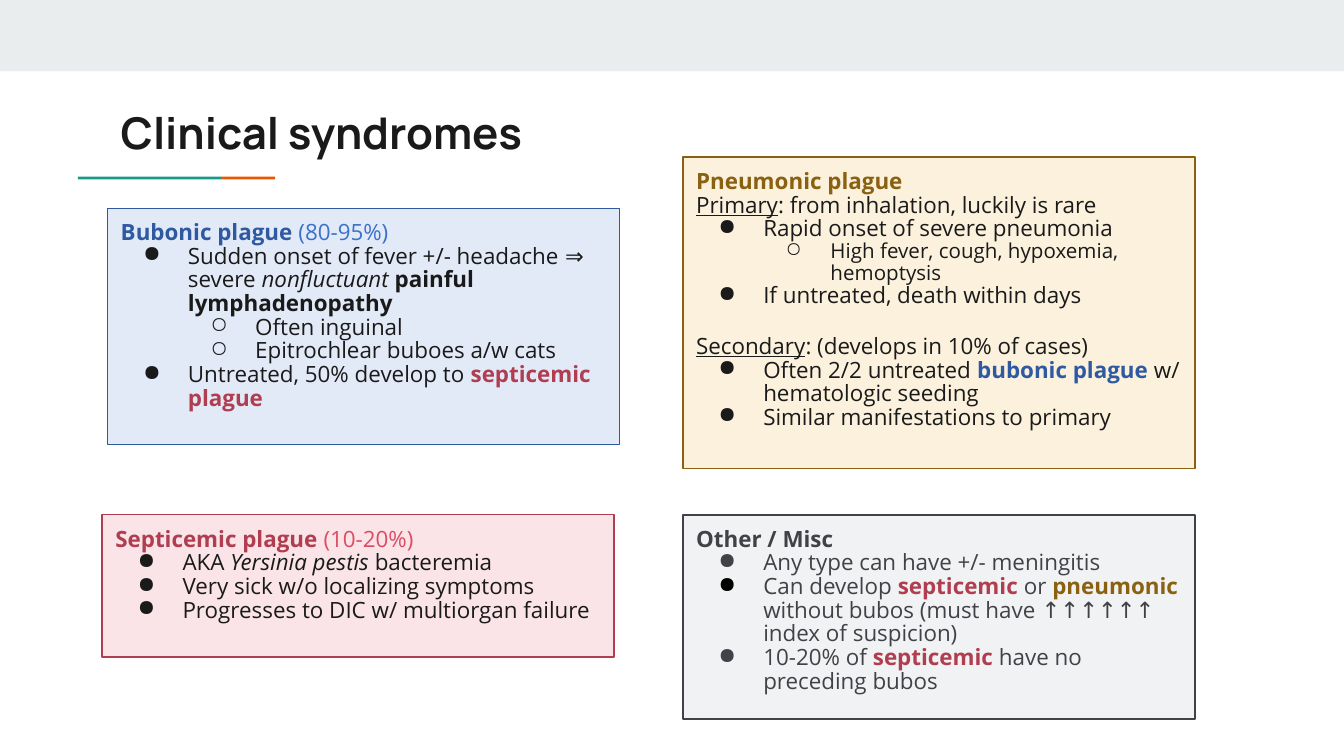
import pptx
import pptx.util
import pptx.dml.color
import pptx.enum.shapes
import pptx.enum.text
import pptx.oxml.ns
import lxml.etree

Pt = pptx.util.Pt
RECT = pptx.enum.shapes.MSO_SHAPE.RECTANGLE

COLORS = {
    "band": "E9EDEE", "teal": "1A9988", "orange": "EB5600",
    "text": "1A1A1A", "black": "000000",
    "blue": "2F5AA2", "blue_light": "3B71CA", "blue_fill": "E2EAF7",
    "red": "B03D50", "red_light": "DC4C64", "red_fill": "FAE4E8",
    "brown": "896110", "brown_fill": "FBF1DD",
    "gray": "404247", "gray_fill": "F1F2F3",
}
BULLETS = {1: "●", 2: "○"}
LINE_SPACING = 0.88
BOX_W = 274.3
LEFT_X, RIGHT_X = 57.6, 365.8
LOWER_Y = 275.8


def rgb(name):
    return pptx.dml.color.RGBColor.from_string(COLORS[name])


def add_rect(s, box, fill, line=None):
    sp = s.shapes.add_shape(RECT, *map(Pt, box))
    sp.shadow.inherit = False
    sp.fill.solid()
    sp.fill.fore_color.rgb = rgb(fill)
    if line:
        sp.line.color.rgb = rgb(line)
        sp.line.width = Pt(0.75)
    else:
        sp.line.fill.background()
    return sp


def set_frame(sp):
    tf = sp.text_frame
    tf.word_wrap = True
    tf.vertical_anchor = pptx.enum.text.MSO_ANCHOR.TOP
    tf.margin_left = tf.margin_right = tf.margin_top = tf.margin_bottom = Pt(7.2)
    return tf


def add_run(p, text, color, style="", size=12, font="Open Sans"):
    """Style letters: b bold, i italic, u underline."""
    r = p.add_run()
    r.text = text
    r.font.name = font
    r.font.size = Pt(size)
    r.font.color.rgb = rgb(color)
    r.font.bold = "b" in style
    r.font.italic = "i" in style
    r.font.underline = "u" in style


def add_bullet(p, level, color):
    ppr = p._p.get_or_add_pPr()
    p.level = level - 1
    ppr.set("marL", str(Pt(36 * level)))
    ppr.set("indent", str(-Pt(24)))
    qn = pptx.oxml.ns.qn
    clr = lxml.etree.SubElement(ppr, qn("a:buClr"))
    lxml.etree.SubElement(clr, qn("a:srgbClr")).set("val", COLORS[color])
    lxml.etree.SubElement(ppr, qn("a:buChar")).set("char", BULLETS[level])


def add_header(s, box):
    """Top band, title and two-colour rule in the given box."""
    x, y, w, h = box
    add_rect(s, (x, y, w, 38.2), "band")
    rule_y = y + 94.6
    add_rect(s, (x + 41.8, rule_y, 76.6, 1.6), "teal")
    add_rect(s, (x + 118.4, rule_y, 29, 1.6), "orange")
    title = s.shapes.add_textbox(Pt(x + 57.6), Pt(y + 49.7), Pt(605.5), Pt(h - 49.7))
    p = set_frame(title).paragraphs[0]
    add_run(p, "Clinical syndromes", "text", "b", 23.4, "Manrope")


def add_syndrome(s, box, fill, line, paragraphs, body="text"):
    """Each paragraph is (level, runs, options); level 0 has no bullet."""
    tf = set_frame(add_rect(s, box, fill, line))
    for i, (level, runs, *rest) in enumerate(paragraphs):
        options = rest[0] if rest else {}
        p = tf.paragraphs[0] if i == 0 else tf.add_paragraph()
        p.alignment = pptx.enum.text.PP_ALIGN.LEFT
        if level:
            add_bullet(p, level, options.get("bullet", body))
        p.line_spacing = LINE_SPACING
        p.space_before = Pt(options.get("before", 0))
        for text, *look in runs:
            color = look[0] if look and look[0] else body
            style = look[1] if len(look) > 1 else ""
            add_run(p, text, color, style, options.get("size", 12))


BUBONIC = [
    (0, [("Bubonic plague", "blue", "b"), (" (80-95%)", "blue_light")]),
    (1, [("Sudden onset of fever +/- headache ⇒ severe ",),
         ("nonfluctuant ", None, "i"), ("painful lymphadenopathy", None, "b")]),
    (2, [("Often inguinal",)]),
    (2, [("Epitrochlear buboes a/w cats",)]),
    (1, [("Untreated, 50% develop to ",), ("septicemic plague", "red", "b")]),
]
SEPTICEMIC = [
    (0, [("Septicemic plague ", "red", "b"), ("(10-20%)", "red_light")]),
    (1, [("AKA ",), ("Yersinia pestis", None, "i"), (" bacteremia",)]),
    (1, [("Very sick w/o localizing symptoms",)]),
    (1, [("Progresses to DIC w/ multiorgan failure",)]),
]
PNEUMONIC = [
    (0, [("Pneumonic plague", "brown", "b")]),
    (0, [("Primary", None, "u"), (": from inhalation, luckily is rare",)]),
    (1, [("Rapid onset of severe pneumonia",)]),
    (2, [("High fever, cough, hypoxemia, hemoptysis",)], {"size": 11}),
    (1, [("If untreated, death within days",)]),
    (0, [("Secondary", None, "u"), (": (develops in 10% of cases)",)], {"before": 14.4}),
    (1, [("Often 2/2 untreated ",), ("bubonic plague", "blue", "b"),
         (" w/ hematologic seeding",)]),
    (1, [("Similar manifestations to primary",)]),
]
OTHER = [
    (0, [("Other / Misc", None, "b")]),
    (1, [("Any type can have +/- meningitis",)]),
    (1, [("Can develop ",), ("septicemic ", "red", "b"), ("or ",),
         ("pneumonic ", "brown", "b"),
         ("without bubos (must have ↑↑↑↑↑↑ index of suspicion)",)], {"bullet": "black"}),
    (1, [("10-20% of ",), ("septicemic ", "red", "b"), ("have no preceding bubos",)]),
]


def main():
    prs = pptx.Presentation()
    prs.slide_width, prs.slide_height = Pt(720), Pt(405)
    s = prs.slides.add_slide(prs.slide_layouts[6])
    add_header(s, (0, 0, 720, 92.2))
    add_syndrome(s, (LEFT_X, 111.6, BOX_W, 126.7), "blue_fill", "blue", BUBONIC)
    add_syndrome(s, (LEFT_X - 2.9, LOWER_Y, BOX_W, 76.3), "red_fill", "red", SEPTICEMIC)
    add_syndrome(s, (RIGHT_X, 84.2, BOX_W, 167), "brown_fill", "brown", PNEUMONIC)
    add_syndrome(s, (RIGHT_X, LOWER_Y, BOX_W, 109.4), "gray_fill", "gray", OTHER, "gray")
    prs.save("out.pptx")


if __name__ == "__main__":
    main()
